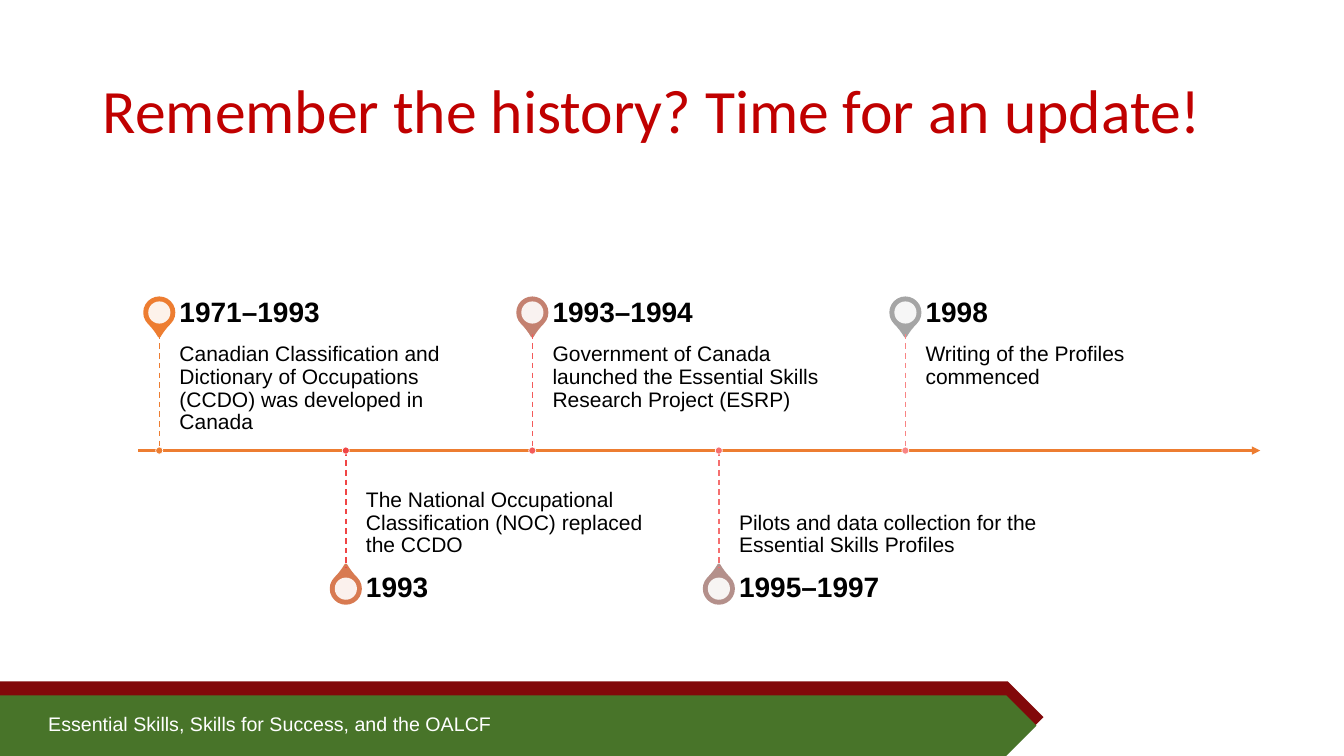
from dataclasses import dataclass

from lxml import etree
from pptx import Presentation, util as u
from pptx.dml.color import RGBColor
from pptx.enum import dml, shapes, text
from pptx.oxml.ns import qn

AXIS = 4.47
START = 1.58
STEP = 1.85
STEM = 1.16
HEAD = 0.41
WIDTH = 3.08
ORANGE = "ED7D31"
WHITE = "FFFFFF"
BLACK = "000000"


@dataclass
class Event:
    date: str
    note: str
    pin: str
    stem: str


EVENTS = [
    Event("1971–1993", "Canadian Classification and Dictionary of Occupations "
          "(CCDO) was developed in Canada", ORANGE, ORANGE),
    Event("1993", "The National Occupational Classification (NOC) replaced the CCDO",
          "D87A51", "F04545"),
    Event("1993–1994", "Government of Canada launched the Essential Skills "
          "Research Project (ESRP)", "C48170", "F35A5A"),
    Event("1995–1997", "Pilots and data collection for the Essential Skills Profiles",
          "B4908B", "F56F6F"),
    Event("1998", "Writing of the Profiles commenced", "A5A5A5", "F88484"),
]


def paint(item, color: str) -> None:
    item.fill.solid()
    item.fill.fore_color.rgb = RGBColor.from_string(color)


def write(box, words: str, size: float, color: str = BLACK, font: str = "Arial",
          bold: bool = False, anchor=text.MSO_ANCHOR.TOP,
          inset: tuple = (0.1, 0.05, 0.1, 0.05), space: float = 0.9) -> None:
    frame = box.text_frame
    frame.word_wrap = True
    frame.auto_size = text.MSO_AUTO_SIZE.NONE
    frame.vertical_anchor = anchor
    (frame.margin_left, frame.margin_top,
     frame.margin_right, frame.margin_bottom) = map(u.Inches, inset)
    para = frame.paragraphs[0]
    para.alignment = text.PP_ALIGN.LEFT
    para.line_spacing = space
    run = para.add_run()
    run.text = words
    run.font.name = font
    run.font.size = u.Pt(size)
    run.font.bold = bold
    run.font.color.rgb = RGBColor.from_string(color)


def add_box(slide, left: float, top: float, width: float, height: float):
    return slide.shapes.add_textbox(*map(u.Inches, (left, top, width, height)))


def add_form(slide, kind, left: float, top: float, width: float, height: float,
             fill: str, edge: str = "", weight: float = 0):
    form = slide.shapes.add_shape(kind, *map(u.Inches, (left, top, width, height)))
    form.shadow.inherit = False
    paint(form, fill)
    if edge:
        paint(form.line, edge)
        form.line.width = u.Pt(weight)
    else:
        form.line.fill.background()
    return form


def add_disc(slide, x: float, y: float, size: float, fill: str, **edge):
    return add_form(slide, shapes.MSO_SHAPE.OVAL, x - size / 2, y - size / 2,
                    size, size, fill, **edge)


def add_line(slide, start: tuple, end: tuple, color: str, weight: float):
    line = slide.shapes.add_connector(
        shapes.MSO_CONNECTOR.STRAIGHT, *map(u.Inches, start + end))
    paint(line.line, color)
    line.line.width = u.Pt(weight)
    etree.SubElement(line._element.spPr, qn("a:effectLst"))
    return line


def add_axis(slide) -> None:
    axis = add_line(slide, (1.37, AXIS), (12.5, AXIS), ORANGE, 1.5)
    etree.SubElement(axis.line._get_or_add_ln(), qn("a:tailEnd"), type="triangle")


def add_pin(slide, x: float, y: float, turn: float, color: str) -> None:
    size = 0.29
    drop = add_form(slide, shapes.MSO_SHAPE.TEAR, x - size / 2, y - size / 2,
                    size, size, color, edge=color, weight=2)
    drop.adjustments[0] = 1.15
    drop.rotation = turn
    disc = add_disc(slide, x, y, 0.22, WHITE)
    tint = disc._element.spPr.find(qn("a:solidFill"))[0]
    etree.SubElement(tint, qn("a:alpha"), val="90000")


def add_event(slide, event: Event, x: float, above: bool) -> None:
    left = x + 0.2
    if above:
        end = AXIS - STEM
        top, head, pin, turn = end, end - HEAD, end - 0.21, 135
        anchor, inset = text.MSO_ANCHOR.TOP, (0, 0.1, 0.1, 0.16)
    else:
        end = AXIS + STEM
        top, head, pin, turn = AXIS, end, end + 0.21, 315
        anchor, inset = text.MSO_ANCHOR.BOTTOM, (0, 0.16, 0, 0.1)
    add_pin(slide, x, pin, turn, event.pin)
    write(add_box(slide, left, top, WIDTH, STEM), event.note, 15,
          anchor=anchor, inset=inset)
    write(add_box(slide, left, head, WIDTH, HEAD), event.date, 20, bold=True,
          anchor=text.MSO_ANCHOR.MIDDLE, inset=(0, 0, 0.14, 0))
    stem = add_line(slide, (x, min(end, AXIS)), (x, max(end, AXIS)), event.stem, 1)
    stem.line.dash_style = dml.MSO_LINE.DASH
    add_disc(slide, x, AXIS, 0.07, event.stem, edge=WHITE, weight=0.5)


def add_foot(slide) -> None:
    plate = shapes.MSO_SHAPE.PENTAGON
    add_form(slide, plate, 0, 6.76, 10.35, 0.71, "82080A")
    add_form(slide, plate, 0, 6.9, 10.28, 0.6, "487429")
    write(add_box(slide, 0.38, 7.01, 9.37, 0.34),
          "Essential Skills, Skills for Success, and the OALCF", 14,
          color=WHITE, space=1.0)


def add_title(slide) -> None:
    title = slide.shapes.title
    title.left, title.top, title.width, title.height = map(
        u.Inches, (0.92, 0.4, 11.5, 1.45))
    write(title, "Remember the history? Time for an update!", 44, color="C00000",
          font="Calibri", anchor=text.MSO_ANCHOR.MIDDLE)


def main() -> None:
    deck = Presentation()
    deck.slide_width, deck.slide_height = u.Inches(13.33), u.Inches(7.5)
    slide = deck.slides.add_slide(deck.slide_layouts.get_by_name("Title Only"))
    add_foot(slide)
    add_title(slide)
    add_axis(slide)
    for i, event in enumerate(EVENTS):
        add_event(slide, event, START + i * STEP, above=i % 2 == 0)
    deck.save("out.pptx")


if __name__ == "__main__":
    main()
